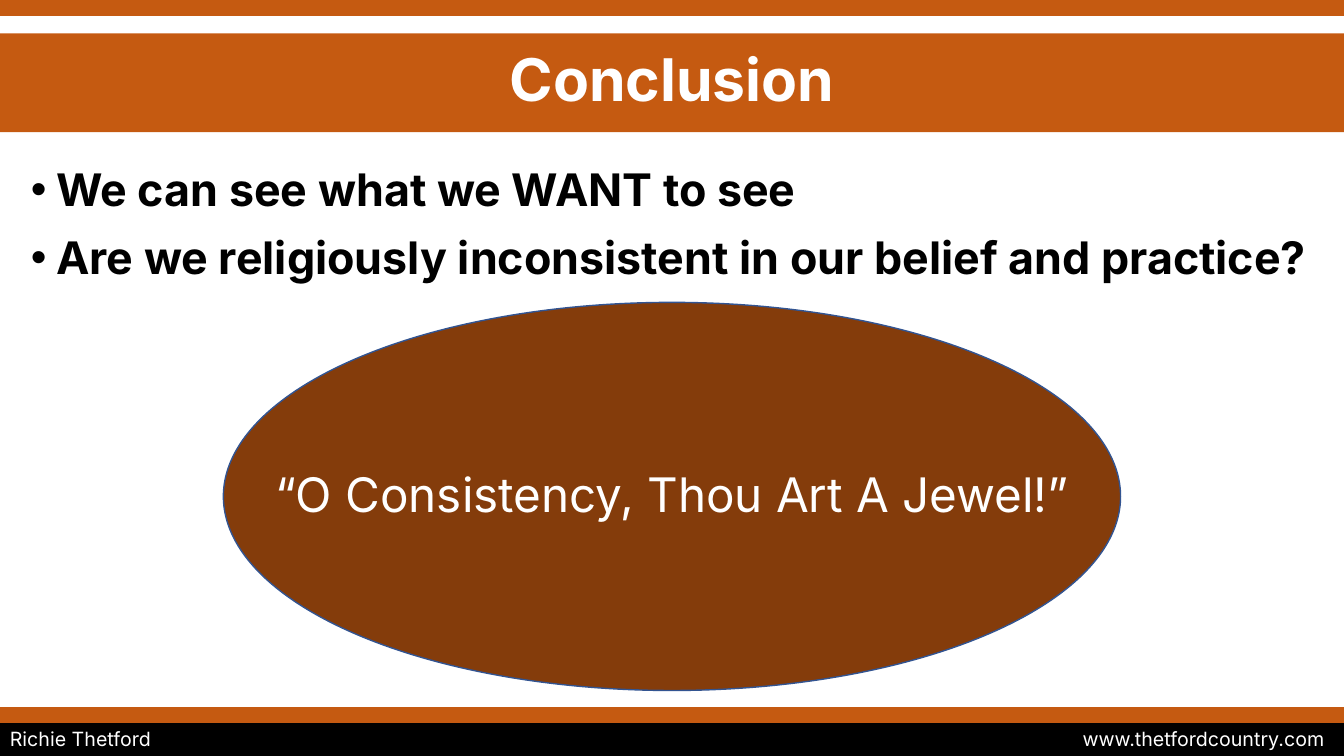
from lxml import etree
from pptx import Presentation
from pptx.dml.color import RGBColor
from pptx.enum import shapes, text
from pptx.oxml.ns import qn
from pptx.util import Cm, Pt

ORANGE = RGBColor(0xC5, 0x5A, 0x11)
BROWN = RGBColor(0x84, 0x3C, 0x0B)
BLUE = RGBColor(0x32, 0x54, 0x91)
BLACK = RGBColor(0, 0, 0)
WHITE = RGBColor(0xFF, 0xFF, 0xFF)

FONT = "Inter"
WIDE, HIGH = 33.87, 19.05
KIND = shapes.MSO_SHAPE
ALIGN = text.PP_ALIGN
MID = text.MSO_ANCHOR.MIDDLE


def add_block(slide, box, fill, kind=KIND.RECTANGLE, line=None):
    """Add a filled preset shape; box is left, top, width, height in cm."""
    block = slide.shapes.add_shape(kind, *map(Cm, box))
    block.shadow.inherit = False
    block.fill.solid()
    block.fill.fore_color.rgb = fill
    if line is None:
        block.line.fill.background()
    else:
        block.line.color.rgb = line
        block.line.width = Pt(1)
    return block


def add_box(slide, box):
    return slide.shapes.add_textbox(*map(Cm, box))


def set_text(shape, *lines, size, color, bold=False, align=ALIGN.LEFT,
             anchor=MID, space=1.0, before=0, bullet=False, tab=None):
    """Write one paragraph for each line of text."""
    frame = shape.text_frame
    frame.word_wrap = True
    frame.vertical_anchor = anchor
    for num, line in enumerate(lines):
        para = frame.add_paragraph() if num else frame.paragraphs[0]
        para.alignment = align
        para.line_spacing = space
        para.space_before = Pt(before)
        run = para.add_run()
        run.text = line
        run.font.name = FONT
        run.font.size = Pt(size)
        run.font.bold = bold
        run.font.color.rgb = color
        props = para._p.get_or_add_pPr()
        if bullet:
            props.set("marL", str(Cm(0.64)))
            props.set("indent", str(-Cm(0.64)))
            etree.SubElement(props, qn("a:buFont"), typeface="Arial")
            etree.SubElement(props, qn("a:buChar"), char="•")
        if tab:
            stops = etree.SubElement(props, qn("a:tabLst"))
            etree.SubElement(stops, qn("a:tab"), pos=str(Cm(tab)), algn="r")


def main():
    deck = Presentation()
    deck.slide_width, deck.slide_height = Cm(WIDE), Cm(HIGH)
    slide = deck.slides.add_slide(deck.slide_layouts[6])

    # Title band
    title = add_block(slide, (0, 0.84, WIDE, 2.49), ORANGE)
    set_text(title, "Conclusion", size=42, color=WHITE, bold=True,
             align=ALIGN.CENTER, space=0.9)

    # Main points
    points = add_box(slide, (0.53, 3.96, 32.82, 13.56))
    set_text(points, "We can see what we WANT to see",
             "Are we religiously inconsistent in our belief and practice?",
             size=32, color=BLACK, bold=True, anchor=text.MSO_ANCHOR.TOP,
             before=10, bullet=True)

    # Footer, with the address at a right tab
    foot = add_block(slide, (0, 18.2, WIDE, 0.85), BLACK)
    set_text(foot, "Richie Thetford\twww.thetfordcountry.com",
             size=14, color=WHITE, tab=33.13)

    # Stripes at the top and above the footer
    for top in (0, 17.82):
        add_block(slide, (0, top, WIDE, 0.4), ORANGE)

    # Closing quote on an ellipse
    add_block(slide, (5.63, 7.62, 22.61, 9.78), BROWN, KIND.OVAL, BLUE)
    quote = add_box(slide, (6.11, 11.58, 21.65, 1.7))
    set_text(quote, "“O Consistency, Thou Art A Jewel!”", size=34,
             color=WHITE, align=ALIGN.CENTER)

    deck.save("out.pptx")


if __name__ == "__main__":
    main()
